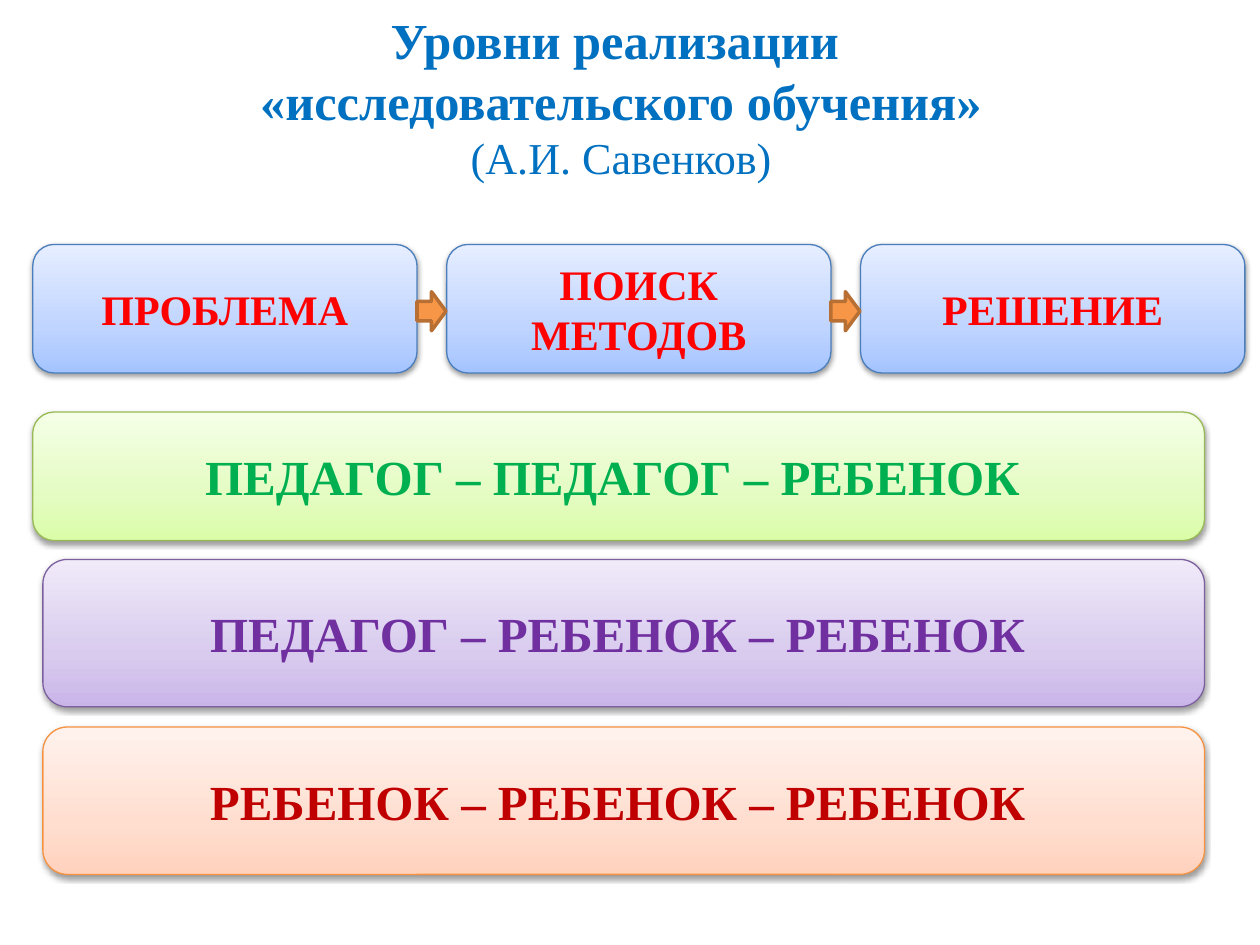
from pptx import Presentation
from pptx.dml.color import RGBColor
from pptx.enum.shapes import MSO_SHAPE as Shape
from pptx.enum.text import MSO_ANCHOR as Anchor, PP_ALIGN as Align
from pptx.oxml import parse_xml
from pptx.oxml.ns import nsdecls, qn
from pptx.util import Inches, Pt

FONT = "Times New Roman"
COLORS = {"title": "0070C0", "arrow": "F79646", "arrow line": "B76F34"}
# Gradient stops run from the bottom edge to the top edge
THEMES = {
    "blue": {"stops": ("A4C4FF", "BFD4FF", "E6EEFF"), "line": "4B7EBC", "text": "FF0000"},
    "green": {"stops": ("DAFDA7", "E4FCC2", "F5FFE7"), "line": "98B955", "text": "00B050"},
    "violet": {"stops": ("C9B5E8", "D8CBEE", "F0EAF9"), "line": "7D60A0", "text": "7030A0"},
    "orange": {"stops": ("FFD2BD", "FFDED0", "FFF2ED"), "line": "F69240", "text": "C00000"},
}
STOP_POSITIONS = (0, 35, 100)

# text, size, bold
TITLE = [
    ("Уровни реализации ", 28.8, True),
    ("«исследовательского обучения»", 28.8, True),
    ("(А.И. Савенков)", 25.2, False),
]
STAGES = ["ПРОБЛЕМА", "ПОИСК МЕТОДОВ", "РЕШЕНИЕ"]
# text, theme, left, top, height
LEVELS = [
    ("ПЕДАГОГ – ПЕДАГОГ – РЕБЕНОК ", "green", 0.26, 3.27, 1.02),
    ("ПЕДАГОГ – РЕБЕНОК – РЕБЕНОК ", "violet", 0.34, 4.44, 1.17),
    ("РЕБЕНОК – РЕБЕНОК – РЕБЕНОК ", "orange", 0.34, 5.77, 1.17),
]
LEVELS_RIGHT = 9.56
STAGE_LEFT, STAGE_TOP, STAGE_WIDTH, STAGE_HEIGHT = 0.26, 1.94, 3.05, 1.02
ARROW_WIDTH, ARROW_HEIGHT = 0.23, 0.31
STAGE_STEP = 3.285


def color(value):
    return RGBColor.from_string(value)


def format_run(run, size, value, bold=True):
    run.font.name, run.font.size, run.font.bold = FONT, Pt(size), bold
    run.font.color.rgb = color(value)


def add_shape(slide, kind, box, line, width):
    shape = slide.shapes.add_shape(kind, *map(Inches, box))
    shape.shadow.inherit = False
    shape.line.color.rgb = color(line)
    shape.line.width = Pt(width)
    return shape


def add_card(slide, text, theme, box, size):
    """Add a rounded box with a vertical gradient, a soft shadow and a label."""
    shape = add_shape(slide, Shape.ROUNDED_RECTANGLE, box, theme["line"], 0.75)
    shape.fill.gradient()
    shape.fill.gradient_angle = 90
    properties = shape._element.spPr
    stops = properties.find(".//" + qn("a:gsLst"))
    for stop in list(stops):
        stops.remove(stop)
    for position, value in zip(STOP_POSITIONS, theme["stops"]):
        stops.append(parse_xml(
            f'<a:gs {nsdecls("a")} pos="{position * 1000}"><a:srgbClr val="{value}"/></a:gs>'))
    properties.find(qn("a:effectLst")).append(parse_xml(
        f'<a:outerShdw {nsdecls("a")} blurRad="40000" dist="20000" dir="5400000" rotWithShape="0">'
        '<a:srgbClr val="000000"><a:alpha val="38000"/></a:srgbClr></a:outerShdw>'))

    frame = shape.text_frame
    frame.text = text
    frame.word_wrap = True
    frame.vertical_anchor = Anchor.MIDDLE
    frame.paragraphs[0].alignment = Align.CENTER
    format_run(frame.paragraphs[0].runs[0], size, theme["text"])


def add_title(slide):
    title = slide.shapes.title
    title.left, title.top, title.width, title.height = map(Inches, (0.43, 0.6, 9, 1.25))
    frame = title.text_frame
    frame.text = "\v".join(text for text, _, _ in TITLE)
    frame.word_wrap = True
    frame.vertical_anchor = Anchor.MIDDLE
    frame.margin_bottom = Inches(0.97)  # lifts the text towards the slide's top
    paragraph = frame.paragraphs[0]
    paragraph.alignment = Align.CENTER
    for run, (_, size, bold) in zip(paragraph.runs, TITLE):
        format_run(run, size, COLORS["title"], bold)


def add_stages(slide):
    for index, text in enumerate(STAGES):
        left = STAGE_LEFT + index * STAGE_STEP
        add_card(slide, text, THEMES["blue"], (left, STAGE_TOP, STAGE_WIDTH, STAGE_HEIGHT), 24)
    arrow_top = STAGE_TOP + (STAGE_HEIGHT - ARROW_HEIGHT) / 2 + 0.02
    for index in range(len(STAGES) - 1):
        left = STAGE_LEFT + STAGE_WIDTH + index * STAGE_STEP
        arrow = add_shape(slide, Shape.RIGHT_ARROW,
                          (left, arrow_top, ARROW_WIDTH, ARROW_HEIGHT), COLORS["arrow line"], 2)
        arrow.fill.solid()
        arrow.fill.fore_color.rgb = color(COLORS["arrow"])


def main():
    presentation = Presentation()
    presentation.slide_width, presentation.slide_height = Inches(10), Inches(7.5)
    slide = presentation.slides.add_slide(presentation.slide_layouts[5])
    add_title(slide)
    add_stages(slide)
    for text, theme, left, top, height in LEVELS:
        add_card(slide, text, THEMES[theme], (left, top, LEVELS_RIGHT - left, height), 28)
    presentation.save("out.pptx")


if __name__ == "__main__":
    main()
